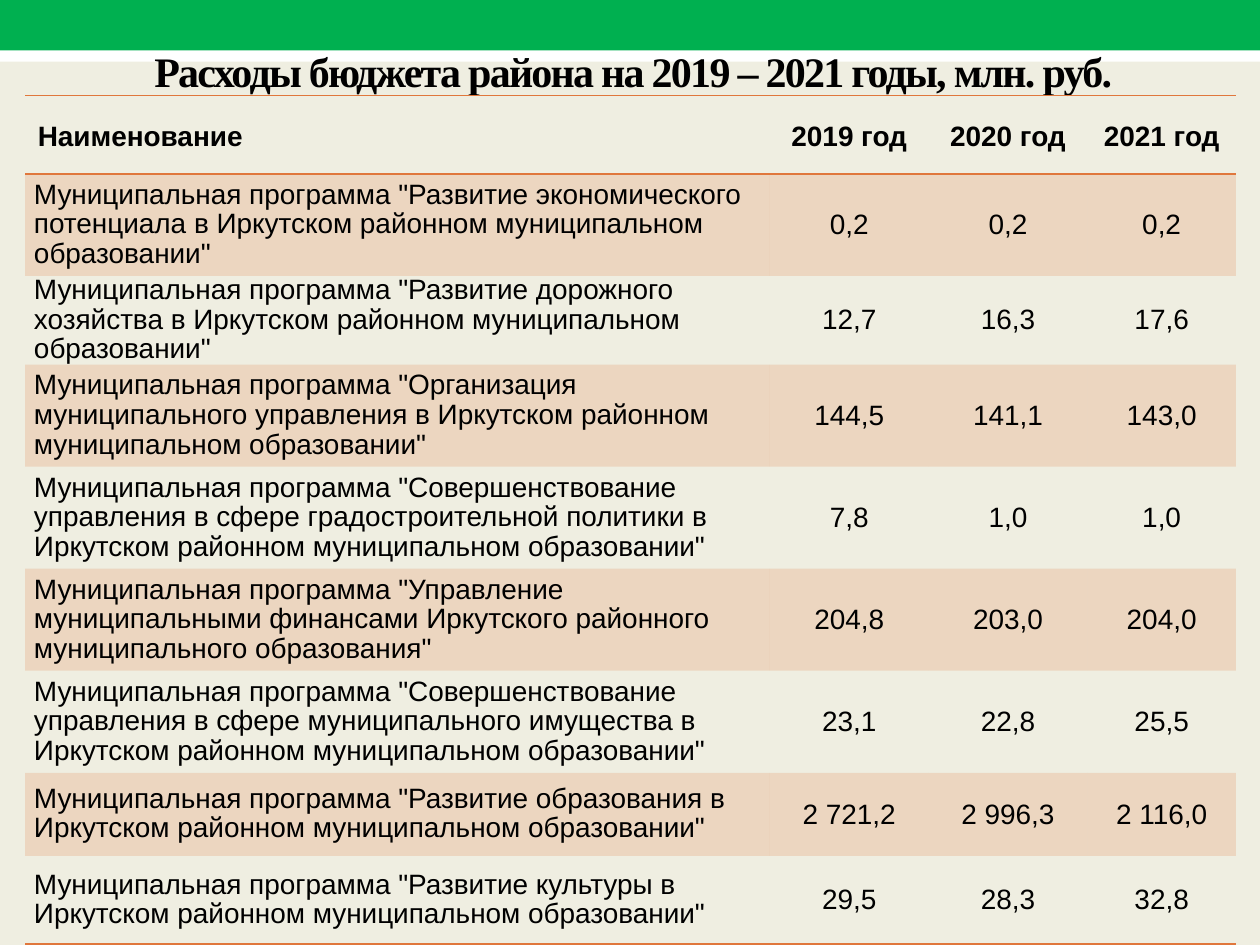
from typing import NamedTuple

from lxml.etree import SubElement
from pptx import Presentation
from pptx.dml.color import RGBColor
from pptx.enum.shapes import MSO_SHAPE
from pptx.enum.text import MSO_ANCHOR, PP_ALIGN
from pptx.oxml.ns import qn
from pptx.util import Pt

ACCENT = "E0773C"
NO_STYLE = "{2D5ABB26-0587-4C30-8999-92F81FD0307C}"


class Band(NamedTuple):
    top: float
    height: float
    color: str


class Program(NamedTuple):
    name: str
    amounts: tuple
    height: float


BANDS = [Band(17.28, 18, "FFFFFF"), Band(0, 28.8, "00B050")]
HEADER = ["Наименование", "2019 год", "2020 год", "2021 год"]
HEADER_HEIGHT = 44.64
COLUMN_WIDTHS = [425.52, 90.72, 90.72, 84.96]
PROGRAMS = [
    Program("Развитие экономического потенциала в Иркутском районном муниципальном образовании",
            ("0,2", "0,2", "0,2"), 58.32),
    Program("Развитие дорожного хозяйства в Иркутском районном муниципальном образовании",
            ("12,7", "16,3", "17,6"), 41.76),
    Program("Организация муниципального управления в Иркутском районном муниципальном образовании",
            ("144,5", "141,1", "143,0"), 58.32),
    Program("Совершенствование управления в сфере градостроительной политики "
            "в Иркутском районном муниципальном образовании",
            ("7,8", "1,0", "1,0"), 58.32),
    Program("Управление муниципальными финансами Иркутского районного муниципального образования",
            ("204,8", "203,0", "204,0"), 58.32),
    Program("Совершенствование управления в сфере муниципального имущества "
            "в Иркутском районном муниципальном образовании",
            ("23,1", "22,8", "25,5"), 58.32),
    Program("Развитие образования в Иркутском районном муниципальном образовании",
            ("2 721,2", "2 996,3", "2 116,0"), 47.52),
    Program("Развитие культуры в Иркутском районном муниципальном образовании",
            ("29,5", "28,3", "32,8"), 50.4),
]


def rgb(color: str) -> RGBColor:
    return RGBColor.from_string(color)


def write(frame, text: str, *, size=16, font="Arial", bold=False,
          align=PP_ALIGN.LEFT, spacing=1.0, tracking=0) -> None:
    para = frame.paragraphs[0]
    para.alignment = align
    para.line_spacing = spacing
    span = para.add_run()
    span.text = text
    span.font.size = Pt(size)
    span.font.name = font
    span.font.bold = bold
    span.font.color.rgb = rgb("000000")
    if tracking:
        span.font._element.set("spc", str(tracking * 100))


def draw_band(page, band: Band, width: int) -> None:
    shape = page.shapes.add_shape(MSO_SHAPE.RECTANGLE, 0, Pt(band.top), width, Pt(band.height))
    shape.shadow.inherit = False
    shape.fill.solid()
    shape.fill.fore_color.rgb = rgb(band.color)
    shape.line.fill.background()


def style_cell(cell, *, shaded=False, borders=()) -> None:
    cell.vertical_anchor = MSO_ANCHOR.MIDDLE
    properties = cell._tc.get_or_add_tcPr()
    # Borders come before the fill
    for side in borders:
        line = SubElement(properties, qn(f"a:{side}"), w=str(Pt(1)))
        solid = SubElement(line, qn("a:solidFill"))
        SubElement(solid, qn("a:srgbClr"), val=ACCENT)
    if shaded:
        cell.fill.solid()
        cell.fill.fore_color.rgb = rgb(ACCENT)
        color = properties.find(f"{qn('a:solidFill')}/{qn('a:srgbClr')}")
        SubElement(color, qn("a:alpha"), val="20000")
    else:
        cell.fill.background()


def draw_table(page) -> None:
    heights = [HEADER_HEIGHT] + [program.height for program in PROGRAMS]
    frame = page.shapes.add_table(len(heights), len(COLUMN_WIDTHS), Pt(14.4), Pt(54.72),
                                  Pt(sum(COLUMN_WIDTHS)), Pt(sum(heights)))
    table = frame.table
    table.first_row = table.horz_banding = False
    table._tbl.tblPr.find(qn("a:tableStyleId")).text = NO_STYLE
    for column, width in zip(table.columns, COLUMN_WIDTHS):
        column.width = Pt(width)
    for row, height in zip(table.rows, heights):
        row.height = Pt(height)

    # Header row
    for index, text in enumerate(HEADER):
        cell = table.cell(0, index)
        write(cell.text_frame, text, bold=True, spacing=1.15,
              align=PP_ALIGN.CENTER if index else PP_ALIGN.LEFT)
        style_cell(cell, borders=("lnT", "lnB"))

    # Program rows, every other one shaded
    for number, program in enumerate(PROGRAMS, start=1):
        borders = ("lnB",) if number == len(PROGRAMS) else ()
        name_cell, *amount_cells = table.rows[number].cells
        write(name_cell.text_frame, f'Муниципальная программа "{program.name}"', spacing=0.95)
        name_cell.margin_left = name_cell.margin_right = Pt(5.04)
        name_cell.margin_top = name_cell.margin_bottom = 0
        for cell, amount in zip(amount_cells, program.amounts):
            write(cell.text_frame, amount, align=PP_ALIGN.CENTER)
        for cell in (name_cell, *amount_cells):
            style_cell(cell, shaded=number % 2 == 1, borders=borders)


def main() -> None:
    deck = Presentation()
    deck.slide_width, deck.slide_height = Pt(720), Pt(540)
    page = deck.slides.add_slide(deck.slide_layouts[5])
    page.background.fill.solid()
    page.background.fill.fore_color.rgb = rgb("EFEEE1")

    # Bands at the top, behind the title
    for band in BANDS:
        draw_band(page, band, deck.slide_width)

    # Title
    title = page.shapes.title
    title.left, title.top, title.width, title.height = Pt(20.16), Pt(20.88), Pt(683.28), Pt(37.44)
    title.text_frame.word_wrap = True
    title.text_frame.vertical_anchor = MSO_ANCHOR.BOTTOM
    write(title.text_frame, "Расходы бюджета района на 2019 – 2021 годы, млн. руб.", size=24,
          font="Times New Roman", bold=True, align=PP_ALIGN.CENTER, tracking=-1)
    page.shapes._spTree.append(title._element)

    draw_table(page)
    deck.save("out.pptx")


if __name__ == "__main__":
    main()
